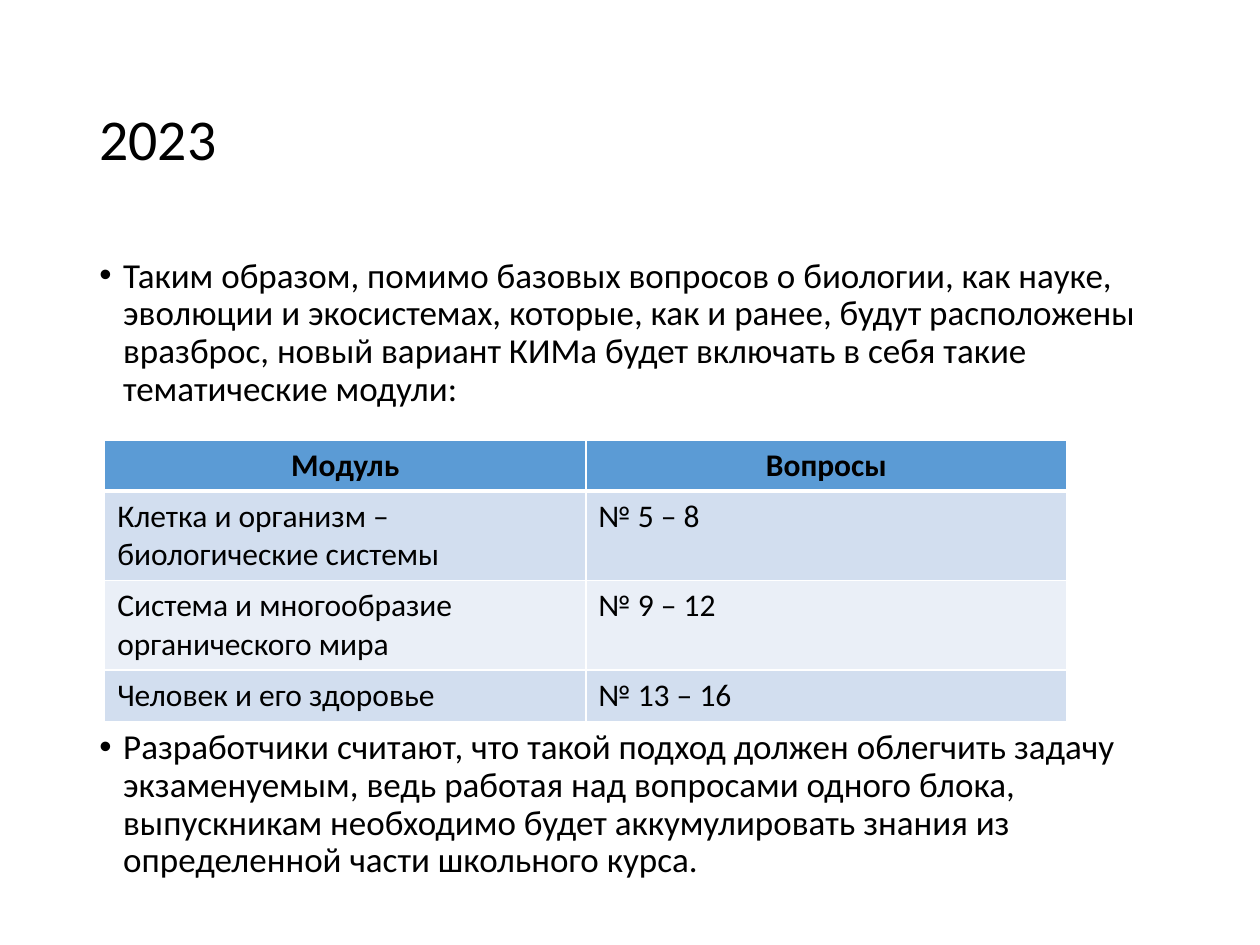
import lxml.etree
import pptx
import pptx.dml.color
import pptx.enum.text
import pptx.oxml.ns
import pptx.util

Cm = pptx.util.Cm
Pt = pptx.util.Pt
ALIGN = pptx.enum.text.PP_ALIGN
ANCHOR = pptx.enum.text.MSO_ANCHOR
HUES = {"ink": "000000", "head": "5B9BD5", "odd": "D2DEEF",
        "even": "EAEFF7", "line": "FFFFFF"}
INTRO = ("Таким образом, помимо базовых вопросов о биологии, как науке, "
         "эволюции и экосистемах, которые, как и ранее, будут расположены "
         "вразброс, новый вариант КИМа будет включать в себя такие "
         "тематические модули:")
CLOSE = ("Разработчики считают, что такой подход должен облегчить задачу "
         "экзаменуемым, ведь работая над вопросами одного блока, "
         "выпускникам необходимо будет аккумулировать знания из "
         "определенной части школьного курса.")
ROWS = [("Модуль", "Вопросы"),
        ("Клетка и организм – биологические системы", "№ 5 – 8"),
        ("Система и многообразие органического мира", "№ 9 – 12"),
        ("Человек и его здоровье", "№ 13 – 16")]


class Deck:
    """Holds the text style and the current slide."""

    face = "Calibri"

    def __init__(self, wide, high):
        self.show = pptx.Presentation()
        self.show.slide_width, self.show.slide_height = wide, high
        self.slide = self.show.slides.add_slide(self.show.slide_layouts[1])

    def hue(self, name):
        return pptx.dml.color.RGBColor.from_string(HUES[name])

    def style(self, para, size, align=ALIGN.LEFT, bold=False):
        para.alignment = align
        font = para.font
        font.name, font.size, font.bold = self.face, Pt(size), bold
        font.color.rgb = self.hue("ink")

    def place(self, shape, left, top, wide, high, anchor):
        shape.left, shape.top = left, top
        shape.width, shape.height = wide, high
        frame = shape.text_frame
        frame.auto_size = pptx.enum.text.MSO_AUTO_SIZE.NONE
        frame.word_wrap = True
        frame.vertical_anchor = anchor
        return frame

    def title(self, text, *box):
        frame = self.place(self.slide.shapes.title, *box, ANCHOR.MIDDLE)
        frame.text = text
        para = frame.paragraphs[0]
        self.style(para, 33)
        para.line_spacing = 0.9

    def bullets(self, items, *box):
        frame = self.place(self.slide.placeholders[1], *box, ANCHOR.TOP)
        frame.text = "\n".join(text for text, gap in items)
        for para, (text, gap) in zip(frame.paragraphs, items):
            self.style(para, 20)
            para.line_spacing, para.space_before = 0.9, Pt(gap)
            props = para._p.get_or_add_pPr()
            props.set("marL", str(Cm(0.48)))
            props.set("indent", str(-Cm(0.48)))

    def border(self, cell, side, width):
        name = pptx.oxml.ns.qn
        line = lxml.etree.SubElement(cell._tc.get_or_add_tcPr(),
                                     name("a:ln" + side), w=str(Pt(width)))
        fill = lxml.etree.SubElement(line, name("a:solidFill"))
        lxml.etree.SubElement(fill, name("a:srgbClr"), val=HUES["line"])

    def table(self, rows, highs, left, top, wide):
        grid = self.slide.shapes.add_table(len(rows), len(rows[0]), left, top,
                                           wide, sum(highs)).table
        for r, (row, high) in enumerate(zip(rows, highs)):
            grid.rows[r].height = high
            head = r == 0
            tint = "head" if head else "odd" if r % 2 else "even"
            for c, text in enumerate(row):
                cell = grid.cell(r, c)
                cell.text = text
                self.style(cell.text_frame.paragraphs[0], 18,
                           ALIGN.CENTER if head else ALIGN.LEFT, head)
                for side in "LRTB":
                    thick = (r, side) in ((0, "B"), (1, "T"))
                    self.border(cell, side, 3 if thick else 1)
                cell.fill.solid()
                cell.fill.fore_color.rgb = self.hue(tint)


def main():
    deck = Deck(Cm(25.4), Cm(19.05))
    left, wide = Cm(1.75), Cm(21.9)
    deck.title("2023", left, Cm(1.01), wide, Cm(3.68))
    deck.bullets([(INTRO, 7.5), (CLOSE, 183)], left, Cm(5.07), wide, Cm(12.09))
    one, two = Cm(1.03), Cm(1.8)
    deck.table(ROWS, [one, two, two, one], Cm(2.11), Cm(8.87), Cm(19.4))
    deck.show.save("out.pptx")


if __name__ == "__main__":
    main()
